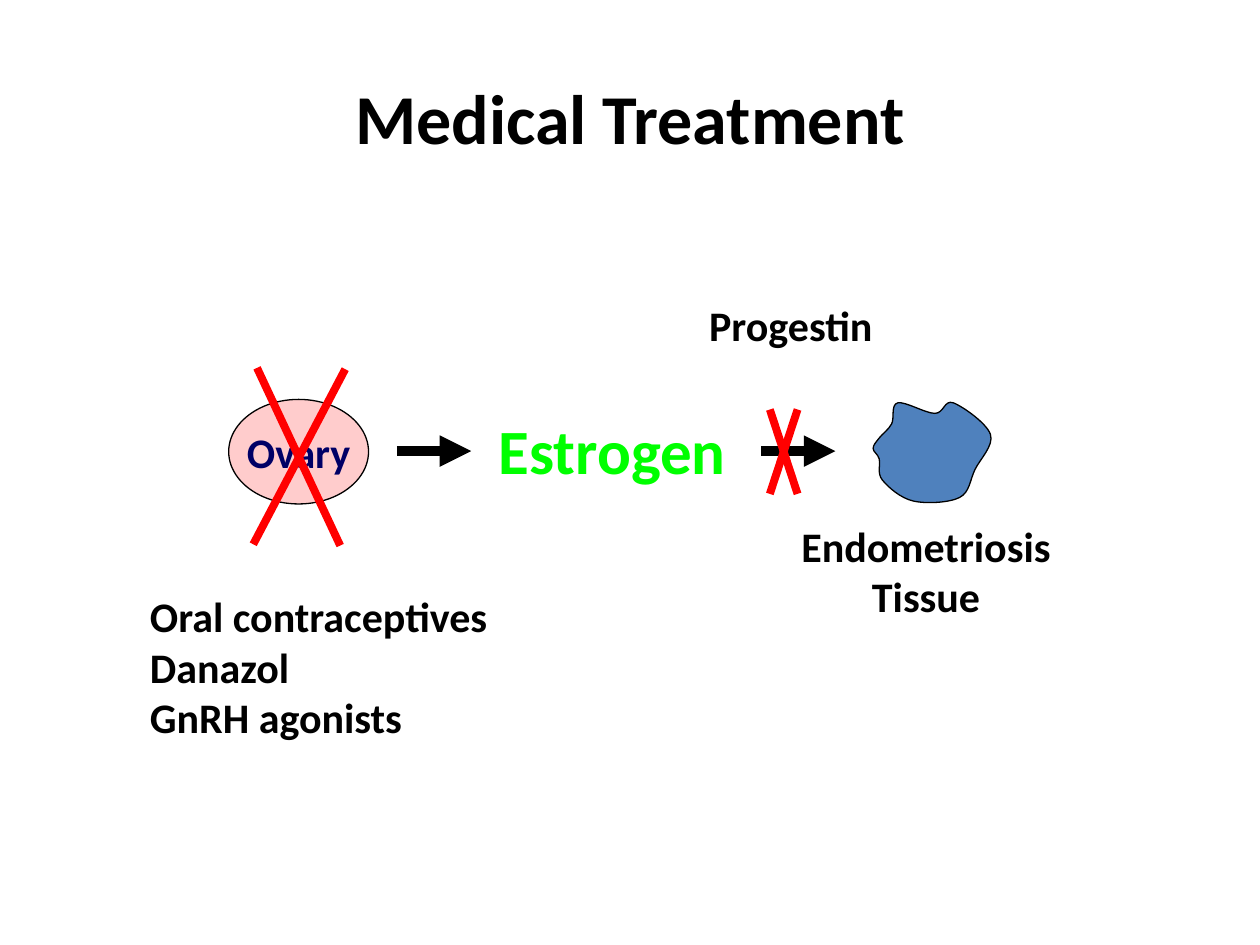
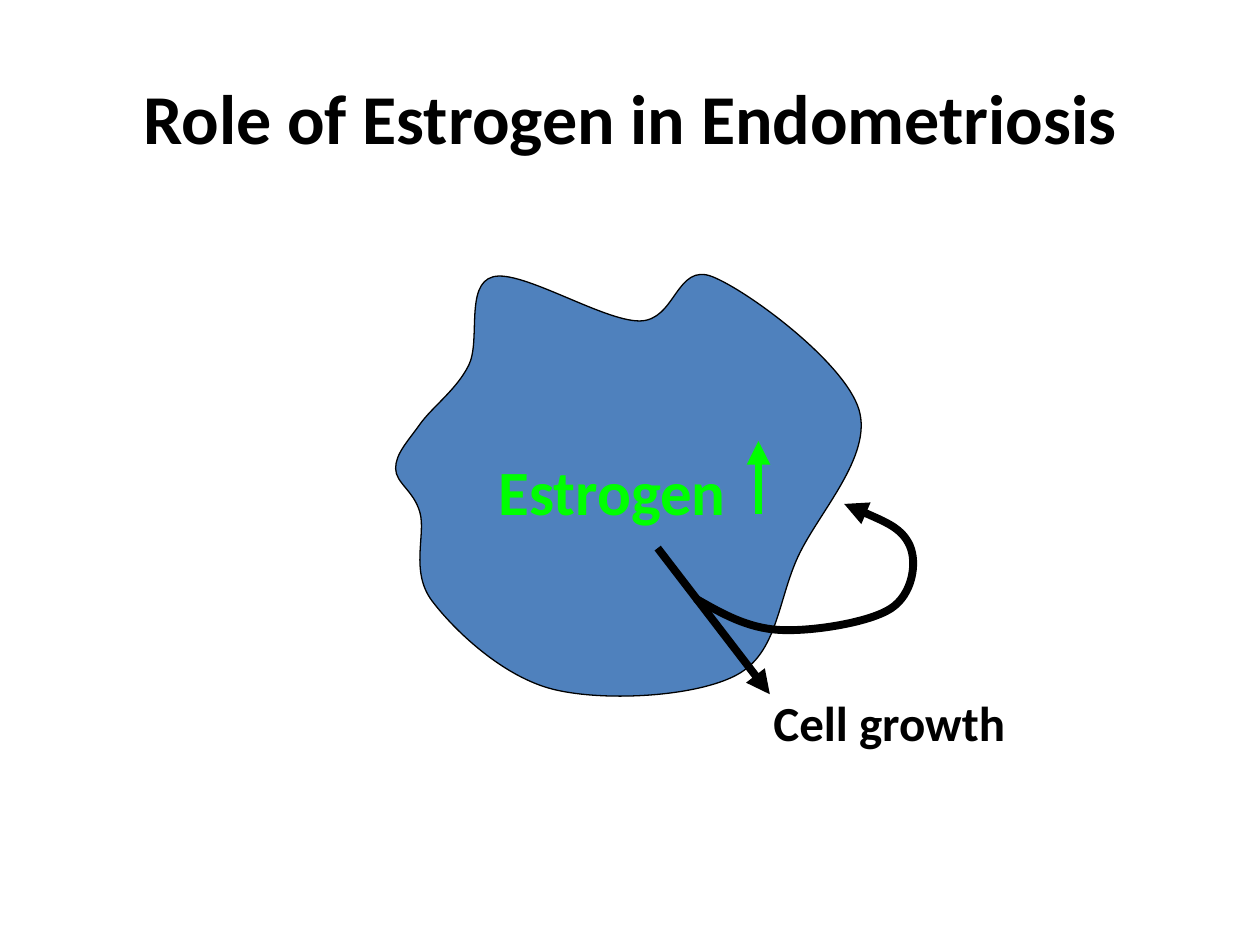
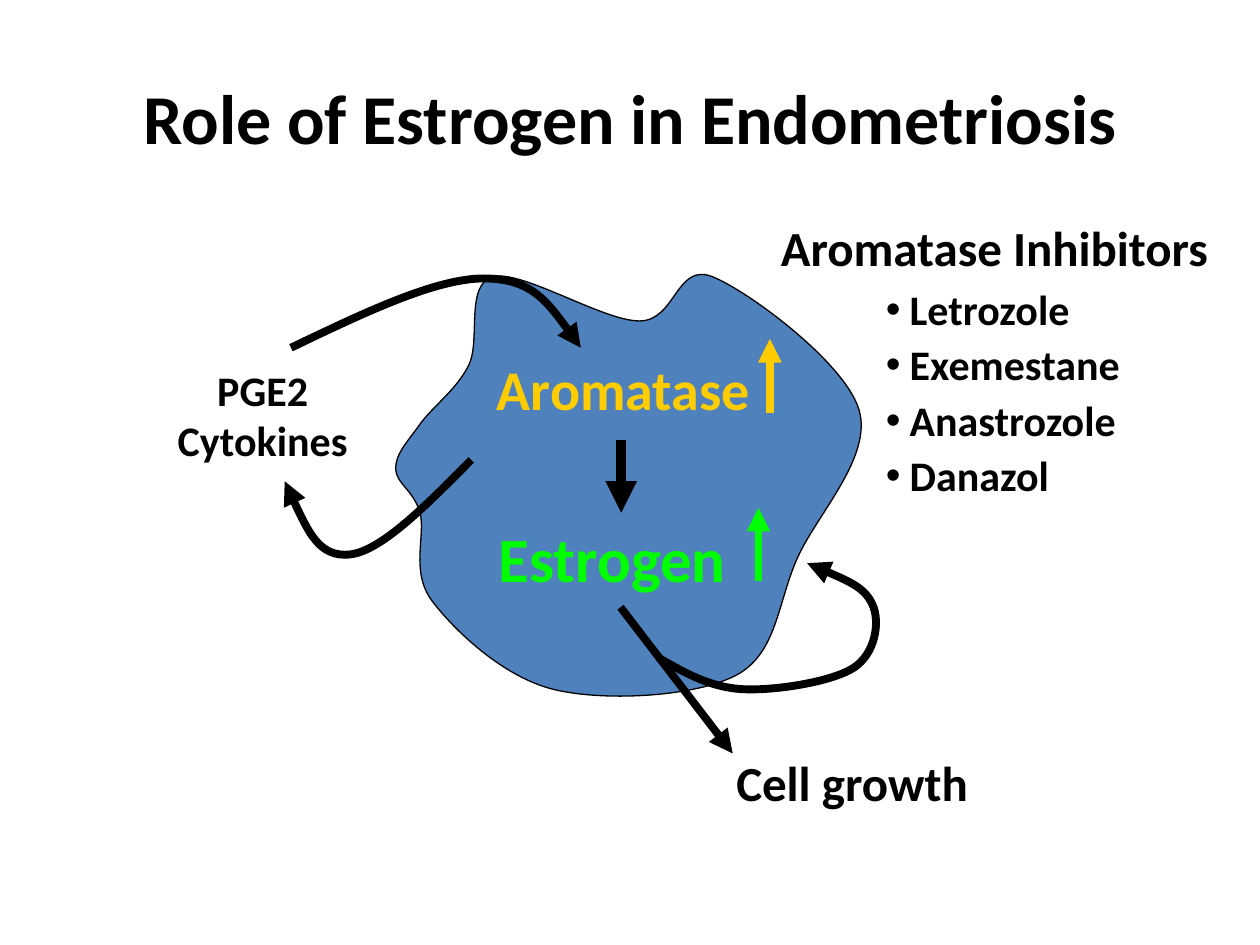
from dataclasses import dataclass

from lxml.etree import SubElement
from pptx import Presentation
from pptx.dml.color import RGBColor
from pptx.enum.shapes import MSO_CONNECTOR, MSO_SHAPE
from pptx.enum.text import MSO_ANCHOR, MSO_AUTO_SIZE, PP_ALIGN
from pptx.oxml.ns import qn
from pptx.util import Inches, Pt


@dataclass(frozen=True)
class Theme:
    font: str = "Calibri"
    black: str = "000000"
    tissue: str = "4F81BD"
    ovary: str = "FFCCCC"
    ovary_text: str = "000066"
    estrogen: str = "00FF00"
    aromatase: str = "FFCC00"
    block: str = "FF0000"
    title_pt: int = 40
    hormone_pt: int = 36
    enzyme_pt: int = 32
    heading_pt: int = 28
    body_pt: int = 24
    outline_pt: float = 0.75
    stroke_pt: float = 4.5
    arrow_pt: float = 6


T = Theme()
WIDTH, HEIGHT = Inches(10), Inches(7.5)
COLS, ROWS = 100, 75
TITLE_CONTENT, TITLE_ONLY = 1, 5

# Outline of the tissue in cells, and the cells across and down its box
TISSUE_OUTLINE = [(2, 11), (6, 7), (8, 1), (20, 4), (26, 1), (38, 10),
                  (33, 20), (28, 28), (13, 29), (3, 23), (2, 17), (0, 14)]
TISSUE_CELLS = 39.17, 29.83


def pos(col, row):
    return round(col * WIDTH / COLS), round(row * HEIGHT / ROWS)


def rgb(color):
    return RGBColor.from_string(color)


def write(tf, lines, size, color=T.black, align=PP_ALIGN.LEFT):
    """Fill a text frame with one bold paragraph per line."""
    for i, line in enumerate(lines):
        p = tf.paragraphs[0] if i == 0 else tf.add_paragraph()
        p.alignment = align
        r = p.add_run()
        r.text = line
        for name, value in {"name": T.font, "size": Pt(size), "bold": True}.items():
            setattr(r.font, name, value)
        r.font.color.rgb = rgb(color)


def new_slide(prs, layout, title):
    s = prs.slides.add_slide(prs.slide_layouts[layout])
    tf = s.shapes.title.text_frame
    tf.vertical_anchor = MSO_ANCHOR.MIDDLE
    write(tf, [title], T.title_pt, align=PP_ALIGN.CENTER)
    return s


def label(s, box, lines, size, color=T.black, align=PP_ALIGN.LEFT, wrap=False):
    tf = s.shapes.add_textbox(*pos(*box[:2]), *pos(*box[2:])).text_frame
    tf.word_wrap = wrap
    tf.auto_size = MSO_AUTO_SIZE.SHAPE_TO_FIT_TEXT
    write(tf, lines, size, color, align)


def body_list(s, box, lines, bullet=None, spacing=1.0):
    sp = s.placeholders[1]
    sp.left, sp.top = pos(*box[:2])
    sp.width, sp.height = pos(*box[2:])
    tf = sp.text_frame
    tf.auto_size = MSO_AUTO_SIZE.NONE
    write(tf, lines, T.body_pt)
    indent = Inches(0.19) if bullet else 0
    for i, p in enumerate(tf.paragraphs):
        p.space_before = Pt(0)
        p.line_spacing = spacing if i else 1.0
        pPr = p._p.get_or_add_pPr()
        pPr.set("marL", str(indent))
        pPr.set("indent", str(-indent))
        if bullet:
            SubElement(pPr, qn("a:buChar")).set("char", bullet)
        else:
            SubElement(pPr, qn("a:buNone"))


def set_line(sp, color, width, arrow=False):
    sp.line.color.rgb = rgb(color)
    sp.line.width = Pt(width)
    if arrow:
        ln = sp.element.spPr.find(qn("a:ln"))
        SubElement(ln, qn("a:tailEnd")).set("type", "triangle")


def straight(s, start, end, color=T.black, width=T.stroke_pt, arrow=True):
    sp = s.shapes.add_connector(MSO_CONNECTOR.STRAIGHT, *pos(*start), *pos(*end))
    set_line(sp, color, width, arrow)
    SubElement(sp.element.spPr, qn("a:effectLst"))


def cross(s, *strokes):
    for start, end in strokes:
        straight(s, start, end, T.block, arrow=False)


def middle(a, b):
    return tuple((u + v) / 2 for u, v in zip(a, b))


def smooth(anchors, closed):
    """Start point, then two handles and an end point for each curve."""
    n = len(anchors)

    def handle(i, sign):
        before, after = anchors[i - 1], anchors[(i + 1) % n]
        return tuple(a + sign * (v - u) / 6
                     for a, u, v in zip(anchors[i], before, after))

    points = [anchors[0]]
    for i in range(n if closed else n - 1):
        j = (i + 1) % n
        c, d = handle(i, 1), handle(j, -1)
        if not closed and i == 0:
            c = middle(anchors[i], d)
        if not closed and j == n - 1:
            d = middle(c, anchors[j])
        points += [c, d, anchors[j]]
    return points


def curve(s, anchors, closed=False):
    points = [pos(*point) for point in smooth(anchors, closed)]
    builder = s.shapes.build_freeform(*points[0])
    builder.add_line_segments(points[1:], close=closed)
    sp = builder.convert_to_shape()
    sp.shadow.inherit = False
    segments = list(sp.element.iter(qn("a:lnTo")))
    for first, second, last in zip(*[iter(segments)] * 3):
        first.tag = qn("a:cubicBezTo")
        for segment in (second, last):
            first.append(segment[0])
            segment.getparent().remove(segment)
    return sp


def curved_arrow(s, anchors):
    sp = curve(s, anchors)
    sp.fill.background()
    set_line(sp, T.black, T.stroke_pt, arrow=True)


def tissue(s, left=31.4, top=20.8, width=37.9, height=34.9):
    across, down = width / TISSUE_CELLS[0], height / TISSUE_CELLS[1]
    sp = curve(s, [(left + x * across, top + y * down) for x, y in TISSUE_OUTLINE],
               closed=True)
    sp.fill.solid()
    sp.fill.fore_color.rgb = rgb(T.tissue)
    set_line(sp, T.black, T.outline_pt)


def ovary(s, box):
    sp = s.shapes.add_shape(MSO_SHAPE.OVAL, *pos(*box[:2]), *pos(*box[2:]))
    sp.shadow.inherit = False
    sp.fill.solid()
    sp.fill.fore_color.rgb = rgb(T.ovary)
    set_line(sp, T.black, T.outline_pt)
    tf = sp.text_frame
    tf.word_wrap = False
    tf.vertical_anchor = MSO_ANCHOR.MIDDLE
    write(tf, ["Ovary"], T.body_pt, T.ovary_text, PP_ALIGN.CENTER)


def estrogen(s, top, rising=True):
    label(s, (38.6, top, 20.2, 7.1), ["Estrogen"], T.hormone_pt, T.estrogen)
    if rising:
        straight(s, (60.2, top + 5.4), (60.2, top - 0.4), T.estrogen)


def cell_growth(s, col, row):
    """Arrow from (col, row) to the label, with the loop back to the tissue."""
    straight(s, (col, row), (col + 8.9, row + 11.6))
    label(s, (col + 8.2, row + 11, 21.5, 5.7), ["Cell growth"], T.heading_pt, wrap=True)
    loop = [(3, 4), (9.7, 6.5), (18.5, 4.8), (20, -0.2), (14.8, -3.5)]
    curved_arrow(s, [(col + x, row + y) for x, y in loop])


def medical_treatment(prs):
    s = new_slide(prs, TITLE_CONTENT, "Medical Treatment")
    tissue(s, 69.3, 31.7, 9.6, 8.3)
    ovary(s, (18.15, 31.7, 11.1, 8.3))
    estrogen(s, 32.2, rising=False)
    for start in (31.5, 60.4):
        straight(s, (start, 35.8), (start + 5.9, 35.8), width=T.arrow_pt)
    label(s, (62.5, 40.8, 22, 9.1), ["Endometriosis", "Tissue"], T.body_pt,
          align=PP_ALIGN.CENTER)
    cross(s, ((20.4, 29.2), (27, 43.3)), ((27.4, 29.3), (20.1, 43.2)))
    cross(s, ((63.3, 32.5), (61.1, 39.2)), ((61.1, 32.5), (63.3, 39.2)))
    body_list(s, (10.9, 46.4, 29.1, 17.2),
              ["Oral contraceptives", "Danazol", "GnRH agonists"])
    label(s, (55.3, 23.3, 15.4, 5), ["Progestin"], T.body_pt)


def role_of_estrogen(prs, layout):
    s = new_slide(prs, layout, "Role of Estrogen in Endometriosis")
    tissue(s)
    return s


def estrogen_growth(prs):
    s = role_of_estrogen(prs, TITLE_ONLY)
    estrogen(s, 35.4)
    cell_growth(s, 52.2, 43.5)


def aromatase_growth(prs):
    s = role_of_estrogen(prs, TITLE_CONTENT)
    label(s, (38.45, 27.65, 22.2, 6.3), ["Aromatase"], T.enzyme_pt, T.aromatase)
    straight(s, (61.1, 32.8), (61.1, 26.9), T.aromatase)
    straight(s, (49.3, 34.9), (49.3, 40.7), width=T.arrow_pt)
    estrogen(s, 40.7)
    cell_growth(s, 49.25, 48.2)
    label(s, (13, 28.4, 15.7, 9.1), ["PGE2", "Cytokines"], T.body_pt,
          align=PP_ALIGN.CENTER)
    curved_arrow(s, [(37.4, 36.5), (27.8, 44), (22.6, 38.2)])
    curved_arrow(s, [(23.1, 27.6), (38.4, 22.1), (46.1, 27.6)])
    label(s, (61, 16.8, 39, 5.7), ["Aromatase Inhibitors"], T.heading_pt, wrap=True)
    body_list(s, (69.3, 22, 22.1, 18.4),
              ["Letrozole", "Exemestane", "Anastrozole", "Danazol"], "•", 1.1)


def main():
    prs = Presentation()
    prs.slide_width, prs.slide_height = WIDTH, HEIGHT
    medical_treatment(prs)
    estrogen_growth(prs)
    aromatase_growth(prs)
    prs.save("out.pptx")


if __name__ == "__main__":
    main()
